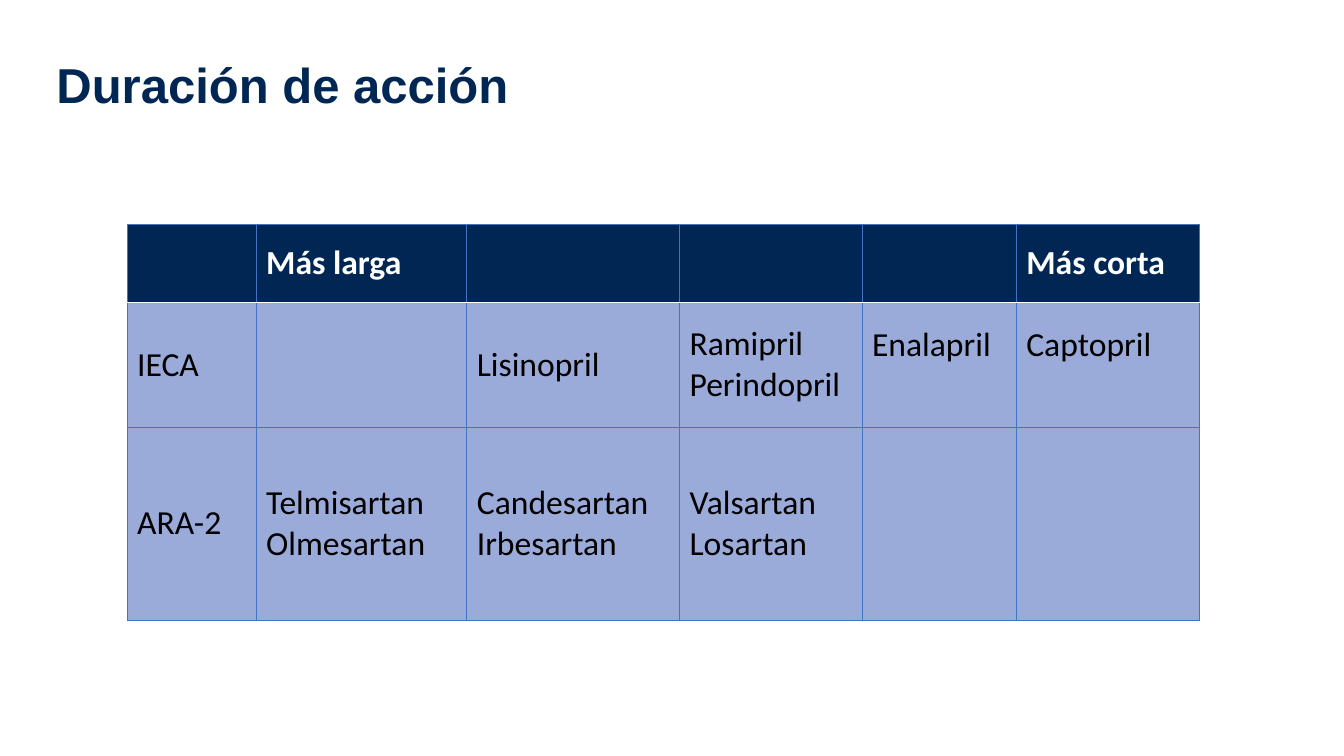
import pptx
import pptx.dml.color
import pptx.enum.text
import pptx.oxml.ns
import pptx.util
from lxml import etree

Inches = pptx.util.Inches
Pt = pptx.util.Pt
MIDDLE = pptx.enum.text.MSO_ANCHOR.MIDDLE

COLORS = {
    "navy": "002754",
    "periwinkle": "9BABD9",
    "border": "4472C4",
    "white": "FFFFFF",
    "black": "000000",
}
COLUMN_WIDTHS = [1.28, 2.09, 2.11, 1.81, 1.53, 1.82]
ROW_HEIGHTS = [0.77, 1.24, 1.91]
ROWS = [
    ["", "Más larga", "", "", "", "Más corta"],
    ["IECA", "", "Lisinopril", "Ramipril\nPerindopril", "Enalapril", "Captopril"],
    ["ARA-2", "", "", "Valsartan\nLosartan", "", ""],
]
ROWS[2][1:3] = ["Telmisartan\nOlmesartan", "Candesartan\nIrbesartan"]
RAISED_DRUGS = ["Enalapril", "Captopril"]  # level with the first line of Ramipril


def rgb(name):
    return pptx.dml.color.RGBColor.from_string(COLORS[name])


def add_border(cell, side, color, width):
    """Draw one side (L, R, T or B) of a cell; call before setting the fill."""
    properties = cell._tc.get_or_add_tcPr()
    line = etree.SubElement(properties, pptx.oxml.ns.qn(f"a:ln{side}"), w=str(Pt(width)))
    fill = etree.SubElement(line, pptx.oxml.ns.qn("a:solidFill"))
    etree.SubElement(fill, pptx.oxml.ns.qn("a:srgbClr"), val=COLORS[color])


presentation = pptx.Presentation()
presentation.slide_width = Inches(13.33)
presentation.slide_height = Inches(7.5)
slide = presentation.slides.add_slide(presentation.slide_layouts[5])

title = slide.shapes.title
title.left, title.top = Inches(0.46), Inches(0.14)
title.width, title.height = Inches(10.13), Inches(1.45)
title.text_frame.text = "Duración de acción"
title.text_frame.vertical_anchor = MIDDLE
paragraph = title.text_frame.paragraphs[0]
paragraph.alignment = pptx.enum.text.PP_ALIGN.LEFT
paragraph.line_spacing = 0.9
paragraph.font.name = "Arial"
paragraph.font.size = Pt(35)
paragraph.font.bold = True
paragraph.font.color.rgb = rgb("navy")

table = slide.shapes.add_table(
    len(ROWS), len(COLUMN_WIDTHS), Inches(1.26), Inches(2.23),
    Inches(sum(COLUMN_WIDTHS)), Inches(sum(ROW_HEIGHTS)),
).table
table.horz_banding = False
for column, width in zip(table.columns, COLUMN_WIDTHS):
    column.width = Inches(width)

for row_index, (texts, height) in enumerate(zip(ROWS, ROW_HEIGHTS)):
    table.rows[row_index].height = Inches(height)
    is_header = row_index == 0
    for column_index, text in enumerate(texts):
        cell = table.cell(row_index, column_index)
        for side in "LRTB":
            if (is_header and side == "B") or (row_index == 1 and side == "T"):
                add_border(cell, side, "white", 1)
            else:
                add_border(cell, side, "border", 0.5)
        cell.fill.solid()
        cell.fill.fore_color.rgb = rgb("navy" if is_header else "periwinkle")
        cell.vertical_anchor = MIDDLE
        if text in RAISED_DRUGS:
            cell.margin_bottom = Inches(0.45)
        cell.text_frame.text = text
        for paragraph in cell.text_frame.paragraphs:
            paragraph.font.name = "Calibri"
            paragraph.font.size = Pt(24)
            paragraph.font.bold = is_header
            paragraph.font.color.rgb = rgb("white" if is_header else "black")

presentation.save("out.pptx")
